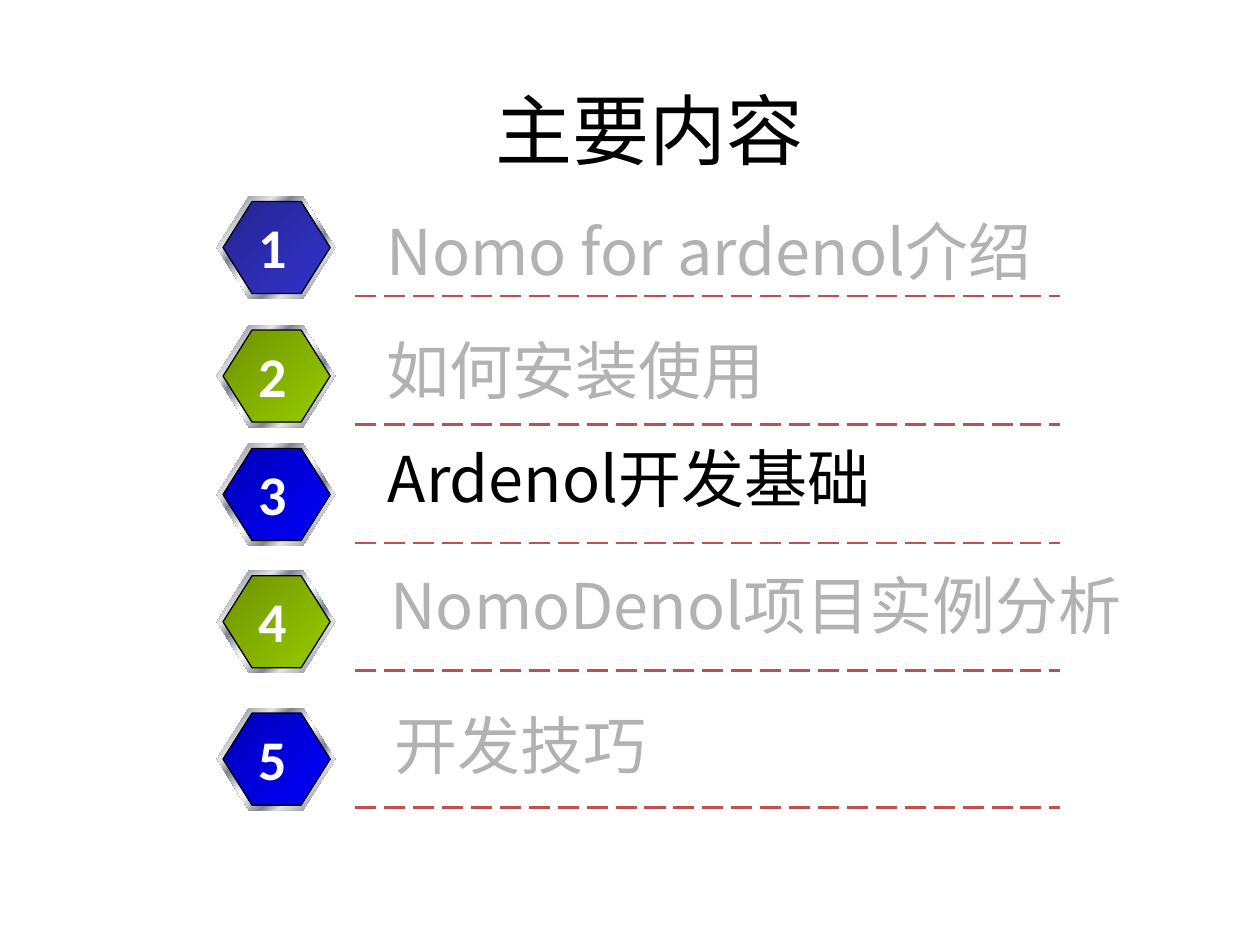
from lxml import etree
from pptx import Presentation
from pptx.dml.color import RGBColor
from pptx.enum import dml, shapes, text
from pptx.oxml.ns import qn
from pptx.util import Inches, Pt

COLOURS = {
    "black": "000000", "white": "FFFFFF", "grey": "B2B2B2", "rule": "C0504D",
    "silver": "E6E6E6", "steel": "7D8496",
    "indigo_dark": "242492", "indigo": "3333CC",
    "green_dark": "6D9200", "green": "99CC00",
    "blue_dark": "0000B6", "blue": "0000FF",
}
METAL = [(0, "silver"), (7, "steel"), (26, "silver"), (34, "steel"),
         (46, "silver"), (50, "white"), (54, "silver"), (66, "steel"),
         (74, "silver"), (93, "steel"), (100, "silver")]
CJK_FONT = "Noto Sans CJK SC"

# badge top, badge colour, text left, text top, text width, text colour, wording
ITEMS = [
    (1.56, "indigo", 2.97, 1.64, 6.06, "grey", "Nomo for ardenol介绍"),
    (2.58, "green", 2.97, 2.58, 6.06, "grey", "如何安装使用"),
    (3.52, "blue", 2.98, 3.44, 6.51, "black", "Ardenol开发基础"),
    (4.53, "green", 3.00, 4.45, 6.49, "grey", "NomoDenol项目实例分析"),
    (5.62, "blue", 3.03, 5.56, 4.79, "grey", "开发技巧"),
]


def add_text(parent, box, wording, size, colour, font="Calibri"):
    """Add a one-line text box at (left, top, width, height) in inches."""
    shape = parent.add_textbox(*map(Inches, box))
    frame = shape.text_frame
    frame.word_wrap = True
    paragraph = frame.paragraphs[0]
    run = paragraph.add_run()
    run.text = wording
    run.font.size = Pt(size)
    run.font.name = font
    run.font.color.rgb = RGBColor.from_string(COLOURS[colour])
    east_asian = etree.SubElement(run.font._element, qn("a:ea"))
    east_asian.set("typeface", CJK_FONT)
    return frame, paragraph, run


def add_hexagon(parent, box, stops):
    """Add a hexagon with a diagonal gradient of (percent, colour) stops."""
    shape = parent.add_shape(shapes.MSO_SHAPE.HEXAGON, *map(Inches, box))
    shape.shadow.inherit = False
    shape.adjustments[0] = 0.315
    shape.fill.gradient()
    shape.fill.gradient_angle = 315
    stop_list = shape._element.spPr.find(".//" + qn("a:gsLst"))
    for stop in list(stop_list):
        stop_list.remove(stop)
    for percent, colour in stops:
        stop = etree.SubElement(stop_list, qn("a:gs"), pos=str(percent * 1000))
        etree.SubElement(stop, qn("a:srgbClr"), val=COLOURS[colour])
    return shape


presentation = Presentation()
presentation.slide_width = Inches(10)
presentation.slide_height = Inches(7.5)
slide = presentation.slides.add_slide(presentation.slide_layouts[6])

frame, paragraph, run = add_text(
    slide.shapes, (2.32, 0.52, 5.67, 1.01), "主要内容", 44, "black")
frame.vertical_anchor = text.MSO_ANCHOR.MIDDLE
paragraph.alignment = text.PP_ALIGN.CENTER

for number, item in enumerate(ITEMS, 1):
    top, badge_colour, left, text_top, width, text_colour, wording = item
    group = slide.shapes.add_group_shape().shapes

    rule_y = Inches(top + 0.79)
    rule = group.add_connector(shapes.MSO_CONNECTOR.STRAIGHT,
                               Inches(2.82), rule_y, Inches(8.41), rule_y)
    rule.line.color.rgb = RGBColor.from_string(COLOURS["rule"])
    rule.line.width = Pt(1.5)
    rule.line.dash_style = dml.MSO_LINE.LONG_DASH
    etree.SubElement(rule._element.spPr, qn("a:effectLst"))

    rim = add_hexagon(group, (1.72, top, 0.94, 0.81), METAL)
    rim.line.fill.background()
    badge = add_hexagon(group, (1.77, top + 0.04, 0.85, 0.73),
                        [(0, badge_colour + "_dark"), (100, badge_colour)])
    badge.line.color.rgb = RGBColor.from_string(COLOURS["black"])
    badge.line.width = Pt(0.75)

    frame, paragraph, run = add_text(
        group, (1.95, top + 0.08, 0.42, 0.63), str(number), 32, "white")
    frame.word_wrap = False
    run.font.bold = True

    add_text(slide.shapes, (left, text_top, width, 0.7), wording, 36,
             text_colour, CJK_FONT)

presentation.save("out.pptx")
